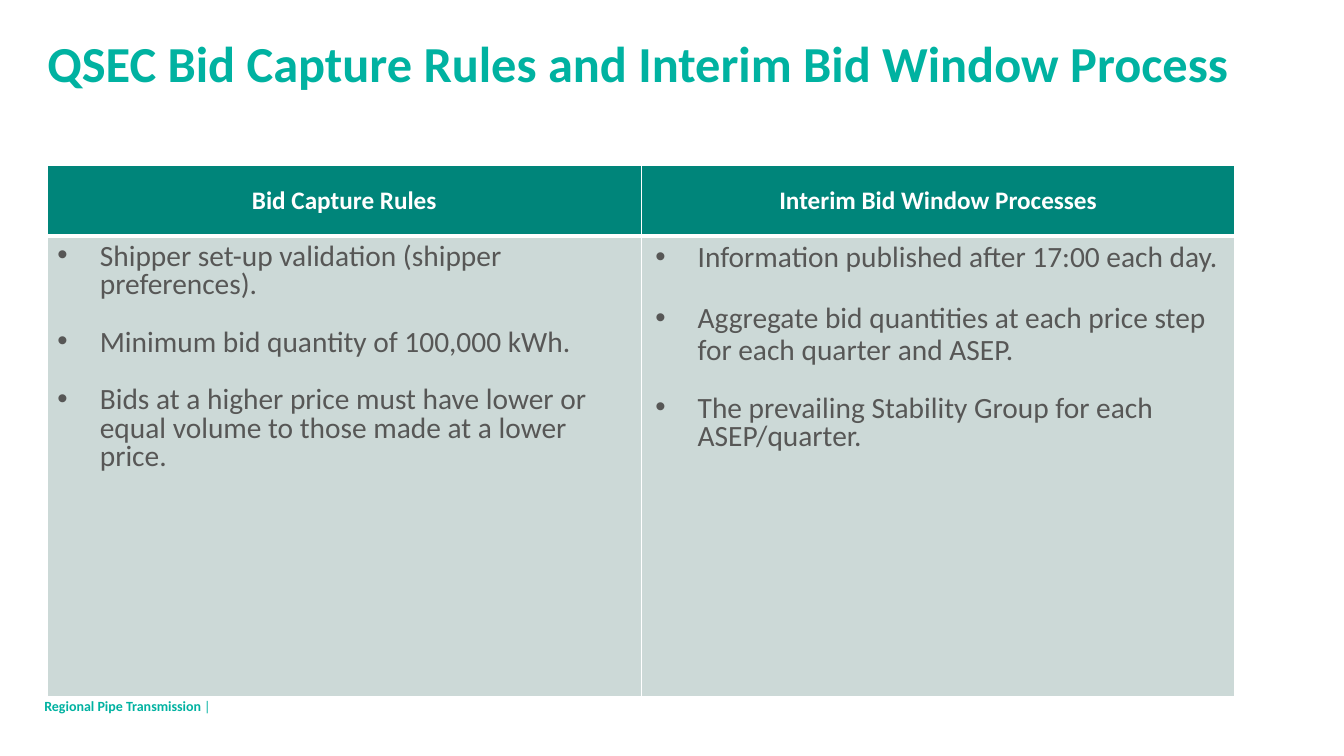
from dataclasses import dataclass

from lxml import etree
from pptx import Presentation
from pptx.dml.color import RGBColor
from pptx.enum.text import MSO_ANCHOR, PP_ALIGN
from pptx.oxml.ns import qn
from pptx.util import Inches, Pt

MIDDLE, TOP = MSO_ANCHOR.MIDDLE, MSO_ANCHOR.TOP
CENTER, LEFT = PP_ALIGN.CENTER, PP_ALIGN.LEFT


@dataclass(frozen=True)
class Theme:
    font: str = "Calibri"
    accent: str = "00B2A1"
    header: str = "00857A"
    panel: str = "CCD9D7"
    body: str = "575756"
    white: str = "FFFFFF"
    title_size: int = 36
    header_size: int = 18
    body_size: int = 21
    footer_size: int = 10
    gap: int = 21
    rule: int = 1
    header_rule: int = 3


THEME = Theme()
TITLE = "QSEC Bid Capture Rules and Interim Bid Window Process"
HEADINGS = ("Bid Capture Rules", "Interim Bid Window Processes")
# Each bullet is paired with its line spacing.
CAPTURE_RULES = (
    ("Shipper set-up validation (shipper preferences).", 0.8),
    ("Minimum bid quantity of 100,000 kWh.", 0.8),
    ("Bids at a higher price must have lower or equal volume to those made "
     "at a lower price.", 0.8),
)
WINDOW_PROCESSES = (
    ("Information published after 17:00 each day.", 0.9),
    ("Aggregate bid quantities at each price step for each quarter and ASEP.", 0.9),
    ("The prevailing Stability Group for each ASEP/quarter.", 0.8),
)


def apply_format(target, values):
    for name, value in values.items():
        setattr(target, name, value)


def add_span(para, text, size, color, bold=False):
    span = para.add_run()
    span.text = text
    apply_format(span.font, {"name": THEME.font, "size": Pt(size), "bold": bold})
    span.font.color.rgb = RGBColor.from_string(color)


def add_text_frame(page, box, anchor=TOP):
    frame = page.shapes.add_textbox(*map(Inches, box)).text_frame
    apply_format(frame, {
        "word_wrap": True, "vertical_anchor": anchor, "margin_left": 0,
        "margin_right": 0, "margin_top": 0, "margin_bottom": 0,
    })
    return frame


def add_title(page, box):
    para = add_text_frame(page, box).paragraphs[0]
    para.line_spacing = 0.9
    add_span(para, TITLE, THEME.title_size, THEME.accent, True)


def add_footer(page, box):
    para = add_text_frame(page, box, MIDDLE).paragraphs[0]
    for text, bold in (("Regional Pipe Transmission ", True), ("|", False)):
        add_span(para, text, THEME.footer_size, THEME.accent, bold)


def add_bullets(page, box, items):
    frame = add_text_frame(page, box)
    for index, (text, spacing) in enumerate(items):
        para = frame.add_paragraph() if index else frame.paragraphs[0]
        properties = para._p.get_or_add_pPr()
        properties.set("marL", str(Inches(0.42)))
        properties.set("indent", str(Inches(-0.42)))
        etree.SubElement(properties, qn("a:buFont"), typeface="Arial")
        etree.SubElement(properties, qn("a:buChar"), char="•")
        apply_format(para, {
            "alignment": LEFT, "line_spacing": spacing, "space_after": Pt(THEME.gap),
        })
        add_span(para, text, THEME.body_size, THEME.body)


def set_borders(cell, widths):
    """Put the left, right, top and bottom lines ahead of the cell fill."""
    properties = cell._tc.get_or_add_tcPr()
    for index, (side, width) in enumerate(zip("LRTB", widths)):
        line = etree.Element(qn(f"a:ln{side}"), w=str(Pt(width)))
        fill = etree.SubElement(line, qn("a:solidFill"))
        etree.SubElement(fill, qn("a:srgbClr"), val=THEME.white)
        properties.insert(index, line)


def add_panels(page, box, header_height):
    left, top, width, height = box
    table = page.shapes.add_table(2, len(HEADINGS), *map(Inches, box)).table
    heights = (header_height, height - header_height)
    fills = (THEME.header, THEME.panel)
    thin, thick = THEME.rule, THEME.header_rule
    borders = ((thin, thin, thin, thick), (thin, thin, thick, thin))
    for column in table.columns:
        column.width = Inches(width / len(HEADINGS))
    for row, row_height, fill, widths in zip(table.rows, heights, fills, borders):
        row.height = Inches(row_height)
        for cell in row.cells:
            cell.fill.solid()
            cell.fill.fore_color.rgb = RGBColor.from_string(fill)
            set_borders(cell, widths)
    for cell, heading in zip(table.rows[0].cells, HEADINGS):
        cell.vertical_anchor = MIDDLE
        para = cell.text_frame.paragraphs[0]
        para.alignment = CENTER
        add_span(para, heading, THEME.header_size, THEME.white, True)
    add_bullets(page, (left + 0.1, top + 0.78, 5.72, 2.82), CAPTURE_RULES)
    add_bullets(page, (left + 6.03, top + 0.76, 5.63, 2.55), WINDOW_PROCESSES)


def main():
    deck = Presentation()
    deck.slide_width, deck.slide_height = Inches(13.33), Inches(7.5)
    page = deck.slides.add_slide(deck.slide_layouts[6])
    add_footer(page, (0.44, 6.88, 2.2, 0.24))
    add_title(page, (0.47, 0.39, 12.34, 1.14))
    add_panels(page, (0.47, 1.64, 11.78, 5.27), 0.7)
    deck.save("out.pptx")


if __name__ == "__main__":
    main()
